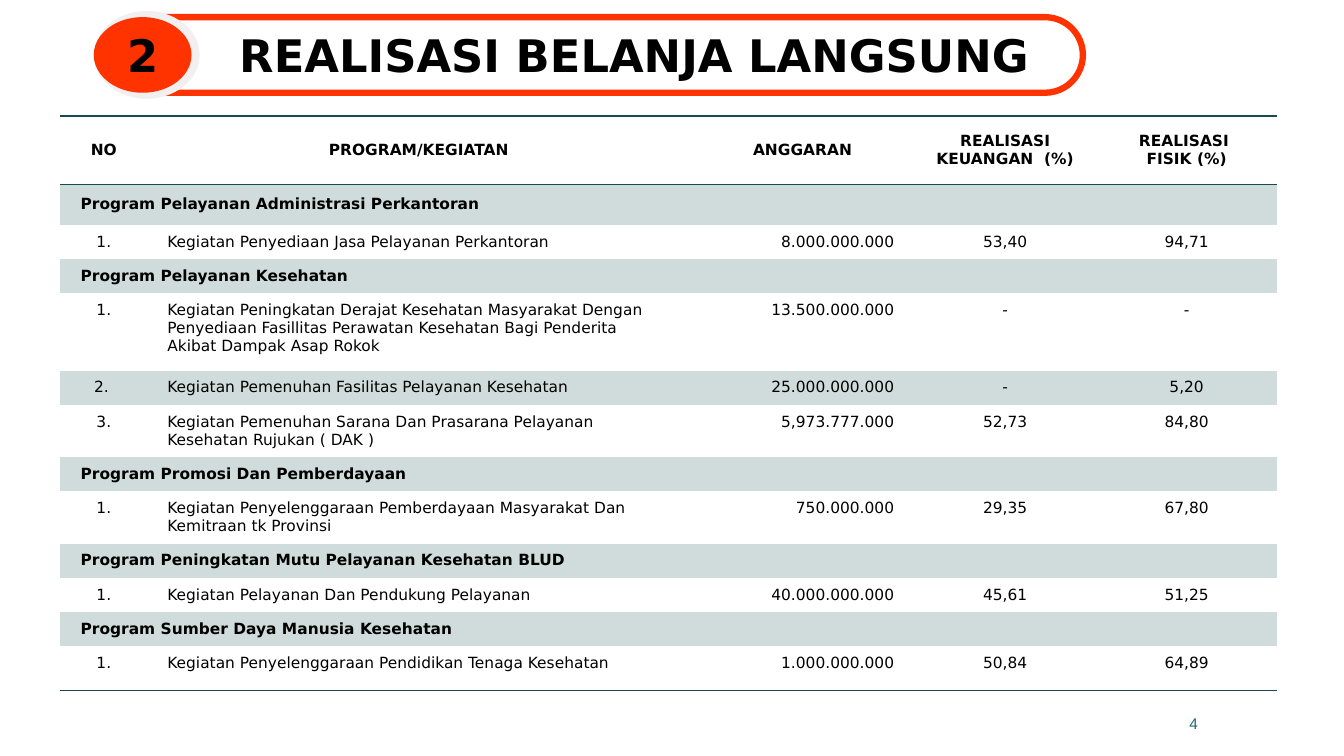
from pptx import Presentation
from pptx.dml.color import RGBColor
from pptx.enum.shapes import MSO_SHAPE
from pptx.enum.text import MSO_ANCHOR, MSO_AUTO_SIZE, PP_ALIGN
from pptx.oxml import parse_xml
from pptx.oxml.ns import nsdecls
from pptx.util import Inches, Pt

TITLE = "REALISASI BELANJA LANGSUNG "
HEAD = ("NO", "PROGRAM/KEGIATAN", "ANGGARAN", "REALISASI KEUANGAN  (%)", "REALISASI \nFISIK (%)")
ROWS = [
    (0.68, HEAD),
    (0.4, ("Program Pelayanan Administrasi Perkantoran",)),
    (0.33, ("1.", "Kegiatan Penyediaan Jasa Pelayanan Perkantoran", "8.000.000.000", "53,40", "94,71")),
    (0.33, ("Program Pelayanan Kesehatan",)),
    (0.77, ("1.", "Kegiatan Peningkatan Derajat Kesehatan Masyarakat Dengan Penyediaan Fasillitas "
            "Perawatan Kesehatan Bagi Penderita Akibat Dampak Asap Rokok", "13.500.000.000", "-", "-")),
    (0.33, ("2. ", "Kegiatan Pemenuhan Fasilitas Pelayanan Kesehatan", "25.000.000.000", "-", "5,20")),
    (0.52, ("3.", "Kegiatan Pemenuhan Sarana Dan Prasarana Pelayanan Kesehatan Rujukan ( DAK )",
            "5,973.777.000", "52,73", "84,80")),
    (0.33, ("Program Promosi Dan Pemberdayaan",)),
    (0.52, ("1.", "Kegiatan Penyelenggaraan Pemberdayaan Masyarakat Dan Kemitraan tk Provinsi",
            "750.000.000", "29,35", "67,80")),
    (0.33, ("Program Peningkatan Mutu Pelayanan Kesehatan BLUD",)),
    (0.33, ("1.", "Kegiatan Pelayanan Dan Pendukung Pelayanan", "40.000.000.000", "45,61", "51,25")),
    (0.33, ("Program Sumber Daya Manusia Kesehatan",)),
    (0.44, ("1.", "Kegiatan Penyelenggaraan Pendidikan Tenaga Kesehatan", "1.000.000.000", "50,84", "64,89")),
]
COLS = (0.86, 5.39, 2.22, 1.8, 1.8)
MID, LEFT, RIGHT = PP_ALIGN.CENTER, PP_ALIGN.LEFT, PP_ALIGN.RIGHT
ALIGN = (MID, LEFT, RIGHT, MID, MID)
FONT = "DejaVu Sans"
BLACK, RED, RING, TEAL, BAND = "000000", "FF3300", "F1EFF0", "164B4F", "D0DBDC"
PLAIN = "{2D5ABB26-0587-4C30-8999-92F81FD0307C}"


def color(code):
    return RGBColor.from_string(code)


def write(frame, text, size, align, bold=False, face=FONT, tint=BLACK):
    frame.text = text
    for para in frame.paragraphs:
        para.alignment = align
        for run in para.runs:
            run.font.size = Pt(size)
            run.font.name = face
            run.font.bold = bold
            run.font.color.rgb = color(tint)


def shape(kind, box, fill=None, line=None):
    item = slide.shapes.add_shape(kind, *map(Inches, box))
    item.shadow.inherit = False
    if fill:
        item.fill.solid()
        item.fill.fore_color.rgb = color(fill)
    else:
        item.fill.background()
    if line:
        item.line.color.rgb = color(line)
        item.line.width = Pt(4.5)
    else:
        item.line.fill.background()
    return item


def rule(cell, sides):
    props = cell._tc.get_or_add_tcPr()
    for spot, side in enumerate(sides):
        props.insert(spot, parse_xml(
            f'<a:ln{side} {nsdecls("a")} w="12700"><a:solidFill>'
            f'<a:srgbClr val="{TEAL}"/></a:solidFill></a:ln{side}>'))


deck = Presentation()
deck.slide_width, deck.slide_height = Inches(13.33), Inches(7.5)
slide = deck.slides.add_slide(deck.slide_layouts[5])

title = slide.shapes.title
title.left, title.top, title.width, title.height = map(Inches, (1.74, 0.2, 9.26, 0.69))
frame = title.text_frame
frame.auto_size = MSO_AUTO_SIZE.NONE
frame.vertical_anchor = MSO_ANCHOR.MIDDLE
write(frame, TITLE, 32, MID, True)

pill = shape(MSO_SHAPE.ROUNDED_RECTANGLE, (1.09, 0.17, 9.65, 0.75), line=RED)
pill.adjustments[0] = 0.5
shape(MSO_SHAPE.OVAL, (0.93, 0.11, 1.05, 0.87), RING)
badge = shape(MSO_SHAPE.OVAL, (0.93, 0.17, 0.97, 0.75), RED)
badge.text_frame.vertical_anchor = MSO_ANCHOR.MIDDLE
write(badge.text_frame, "2", 32, MID, True)

high = sum(tall for tall, _ in ROWS)
holder = slide.shapes.add_table(len(ROWS), len(COLS), Inches(0.6), Inches(1.15),
                                Inches(sum(COLS)), Inches(high))
table = holder.table
table.first_row = table.horz_banding = False
table._tbl.tblPr.find("{*}tableStyleId").text = PLAIN
for col, wide in zip(table.columns, COLS):
    col.width = Inches(wide)

last = len(ROWS) - 1
for r, (tall, texts) in enumerate(ROWS):
    table.rows[r].height = Inches(tall)
    group = len(texts) == 1
    if group:
        table.cell(r, 0).merge(table.cell(r, len(COLS) - 1))
    for c, cell in enumerate(table.rows[r].cells):
        cell.margin_left = cell.margin_right = Inches(0.2)
        cell.margin_top = cell.margin_bottom = Inches(0.08)
        cell.vertical_anchor = MSO_ANCHOR.MIDDLE if r < 2 else MSO_ANCHOR.TOP
        if group or texts[0] == "2. ":
            cell.fill.solid()
            cell.fill.fore_color.rgb = color(BAND)
        else:
            cell.fill.background()
        if c < len(texts):
            align = MID if r == 0 else LEFT if group else ALIGN[c]
            write(cell.text_frame, texts[c], 11, align, group or r == 0)
        if r in (0, last):
            rule(cell, "TB" if r == 0 else "B")

page = slide.shapes.add_textbox(*map(Inches, (8.87, 6.98, 3.11, 0.4)))
page.text_frame.word_wrap = True
page.text_frame.vertical_anchor = MSO_ANCHOR.MIDDLE
write(page.text_frame, "4", 11, RIGHT, face="Arial", tint="1F696F")

deck.save("out.pptx")
